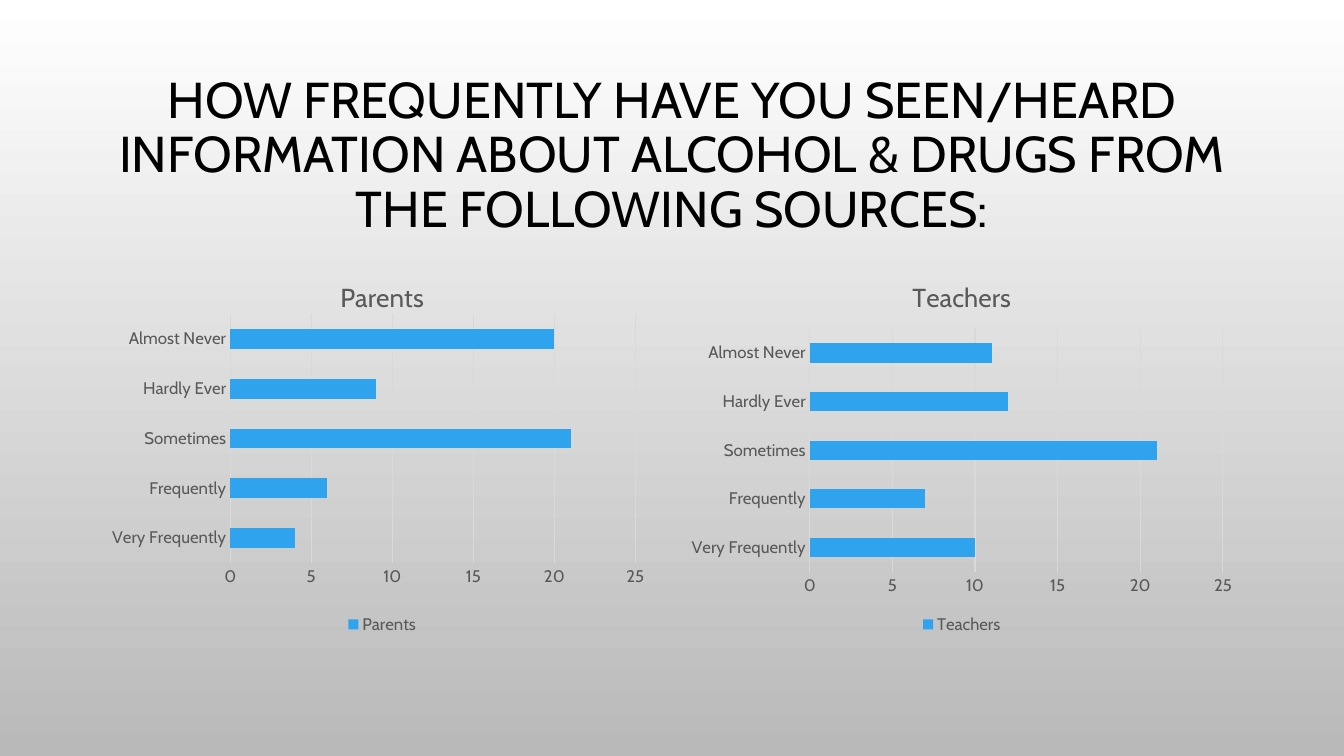
"""Build a survey slide with two bar charts of how often sources inform."""
from pptx import Presentation
from pptx.chart.data import CategoryChartData
from pptx.dml.color import RGBColor
from pptx.enum.chart import XL_CHART_TYPE, XL_LEGEND_POSITION, XL_TICK_MARK
from pptx.enum.text import MSO_ANCHOR, PP_ALIGN
from pptx.oxml import parse_xml
from pptx.oxml.ns import nsdecls
from pptx.util import Pt

STACKED = XL_CHART_TYPE.BAR_STACKED
BOTTOM = XL_LEGEND_POSITION.BOTTOM
NO_TICK = XL_TICK_MARK.NONE
MIDDLE = MSO_ANCHOR.MIDDLE
CENTER = PP_ALIGN.CENTER

PX = 9525
FONT = "Cabin"
COLORS = {
    "top": "FFFFFF",
    "base": "B9B9B9",
    "title": "000000",
    "label": "595959",
    "grid": "D9D9D9",
    "bar": "2FA3EE",
}
TITLE = ("HOW FREQUENTLY HAVE YOU SEEN/HEARD INFORMATION ABOUT "
         "ALCOHOL & DRUGS FROM THE FOLLOWING SOURCES:")
LEVELS = ["Very Frequently", "Frequently", "Sometimes", "Hardly Ever",
          "Almost Never"]
PARENTS = [4, 6, 21, 9, 20]
TEACHERS = [10, 7, 21, 12, 11]
PLOT = {"x": 0.23, "y": 0.14, "w": 0.72, "h": 0.66}


def color(name):
    return RGBColor.from_string(COLORS[name])


def box(*sides):
    return [side * PX for side in sides]


def set_font(font, size, name):
    font.name = FONT
    font.size = Pt(size)
    font.bold = False
    font.color.rgb = color(name)


def set_line(line):
    line.color.rgb = color("grid")
    line.width = Pt(0.75)


def add_back(slide):
    fill = slide.background.fill
    fill.gradient()
    fill.gradient_angle = 270
    for stop, name, place in zip(fill.gradient_stops, ("top", "base"), (0, 1)):
        stop.color.rgb = color(name)
        stop.position = place


def add_title(slide):
    frame = slide.shapes.add_textbox(*box(96, 65, 1088, 168)).text_frame
    frame.word_wrap = True
    frame.vertical_anchor = MIDDLE
    para = frame.paragraphs[0]
    para.text = TITLE
    para.alignment = CENTER
    para.line_spacing = 0.9
    set_font(para.font, 36, "title")


def place_plot(chart, plot):
    sides = "".join(f'<c:{key}Mode val="edge"/>' for key in "xy")
    sides += "".join(f'<c:{key} val="{val}"/>' for key, val in plot.items())
    chart.element.chart.plotArea.insert(0, parse_xml(
        f'<c:layout {nsdecls("c")}><c:manualLayout>'
        f'<c:layoutTarget val="inner"/>{sides}'
        '</c:manualLayout></c:layout>'))


def style_axes(chart):
    levels, counts = chart.category_axis, chart.value_axis
    for axis in (levels, counts):
        axis.major_tick_mark = axis.minor_tick_mark = NO_TICK
        set_font(axis.tick_labels.font, 12, "label")
    set_line(levels.format.line)
    counts.format.line.fill.background()
    counts.minimum_scale, counts.maximum_scale = 0, 25
    counts.major_unit = 5
    set_line(counts.major_gridlines.format.line)


def add_bars(slide, left, name, values, plot=None):
    data = CategoryChartData()
    data.categories = LEVELS
    data.add_series(name, values)
    frame = slide.shapes.add_chart(STACKED, *box(left, 249, 536, 359), data)
    chart = frame.chart
    set_font(chart.font, 10, "title")
    style_axes(chart)
    head = chart.chart_title.text_frame.paragraphs[0]
    head.text = name
    set_font(head.font, 18.6, "label")
    chart.chart_title.include_in_layout = False
    chart.has_legend = True
    chart.legend.position = BOTTOM
    chart.legend.include_in_layout = False
    set_font(chart.legend.font, 12, "label")
    bars = chart.plots[0]
    bars.gap_width, bars.overlap = 150, 100
    bars.vary_by_categories = False
    fill = bars.series[0].format.fill
    fill.solid()
    fill.fore_color.rgb = color("bar")
    if plot:
        place_plot(chart, plot)


def main():
    deck = Presentation()
    deck.slide_width, deck.slide_height = box(1280, 720)
    slide = deck.slides.add_slide(deck.slide_layouts[6])
    add_back(slide)
    add_title(slide)
    add_bars(slide, 96, "Parents", PARENTS, PLOT)
    add_bars(slide, 648, "Teachers", TEACHERS)
    deck.save("out.pptx")


if __name__ == "__main__":
    main()
